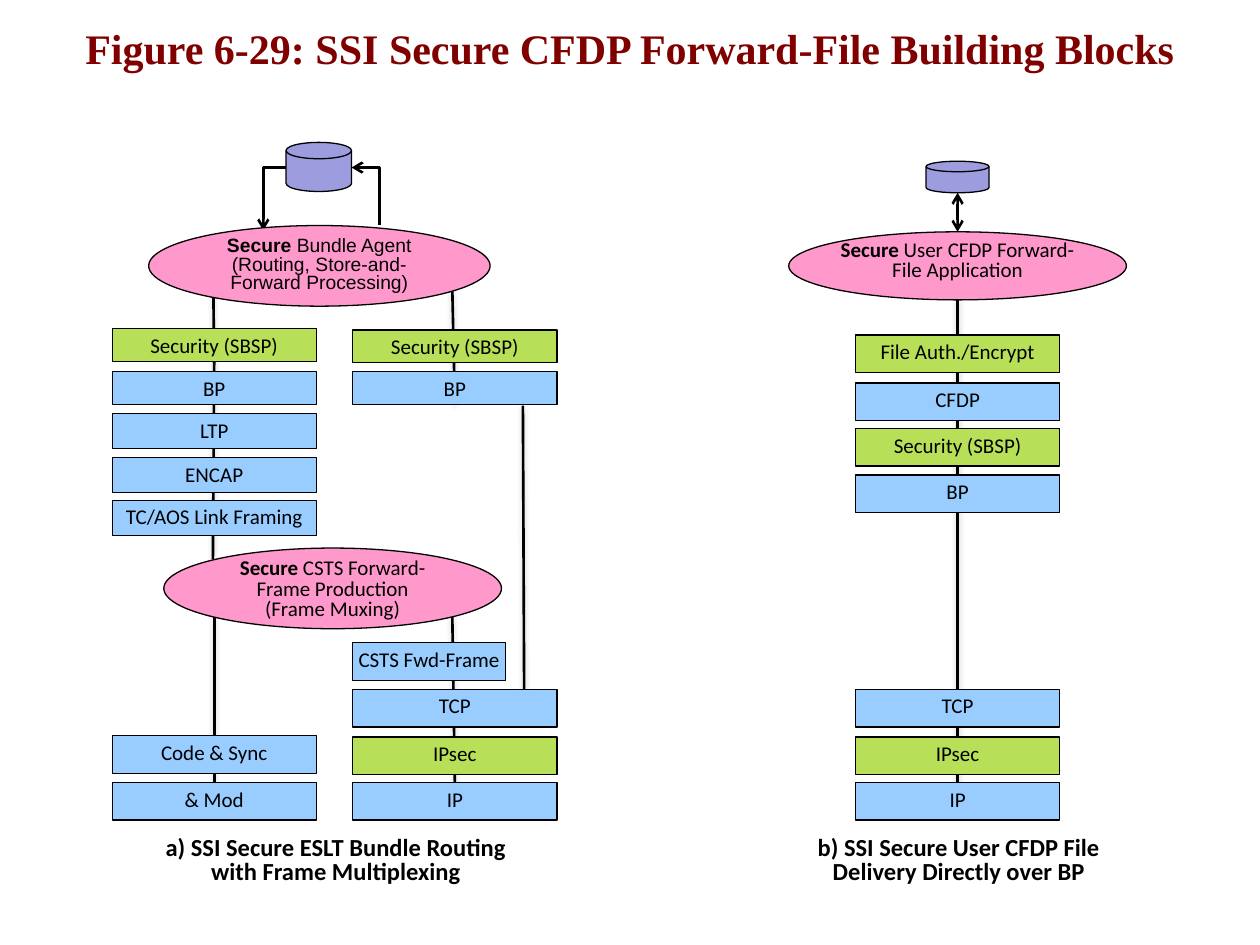
import pptx
import pptx.dml.color
import pptx.enum.shapes
import pptx.enum.text
import pptx.oxml
import pptx.oxml.ns
import pptx.util
from dataclasses import dataclass

Inches, Pt = pptx.util.Inches, pptx.util.Pt
RGB = pptx.dml.color.RGBColor.from_string
SHAPE = pptx.enum.shapes.MSO_SHAPE
CONNECTOR = pptx.enum.shapes.MSO_CONNECTOR
ANCHOR = pptx.enum.text.MSO_ANCHOR
NS = pptx.oxml.ns.nsdecls("a")


@dataclass(frozen=True)
class Theme:
    title: str = "800000"
    ink: str = "000000"
    protocol: str = "99CCFF"
    security: str = "B7E058"
    process: str = "FF99CC"
    store: str = "9C9CDF"
    title_size: int = 24
    caption_size: int = 14
    label_size: int = 12
    agent_size: int = 11
    thin: float = 0.75
    thick: float = 1.5


theme = Theme()
prs = pptx.Presentation()
prs.slide_width, prs.slide_height = Inches(10), Inches(7.5)
slide = prs.slides.add_slide(prs.slide_layouts[5])


def write(frame, paragraphs, size, font="Calibri", color=theme.ink, spacing=None, margins=None):
    """Write centred paragraphs, each a list of (text, bold) runs."""
    frame.word_wrap = True
    if margins:
        frame.margin_left = frame.margin_right = Inches(margins[0])
        frame.margin_top = frame.margin_bottom = Inches(margins[1])
    for i, runs in enumerate(paragraphs):
        paragraph = frame.add_paragraph() if i else frame.paragraphs[0]
        paragraph.alignment = pptx.enum.text.PP_ALIGN.CENTER
        paragraph.line_spacing = spacing
        for text, bold in runs:
            run = paragraph.add_run()
            run.text = text
            run.font.name, run.font.size, run.font.bold = font, Pt(size), bold
            run.font.color.rgb = RGB(color)


def connect(start, end, kind=CONNECTOR.STRAIGHT, arrows=(), shadow=False):
    """Draw a black line; arrows lists the ends (headEnd, tailEnd) that carry one."""
    line = slide.shapes.add_connector(kind, *map(Inches, start + end))
    line.line.width = Pt(theme.thick)
    line.line.color.rgb = RGB(theme.ink)
    for side in arrows:
        line.line._get_or_add_ln().append(pptx.oxml.parse_xml(f'<a:{side} {NS} type="arrow"/>'))
    properties = line._element.spPr
    if kind == CONNECTOR.ELBOW:
        properties.find(pptx.oxml.ns.qn("a:prstGeom")).set("prst", "bentConnector2")
    glow = (
        f'<a:outerShdw blurRad="{Pt(3.1)}" dist="{Pt(1.6)}" dir="5400000" rotWithShape="0">'
        '<a:srgbClr val="808080"><a:alpha val="38000"/></a:srgbClr></a:outerShdw>'
    ) if shadow else ""
    properties.append(pptx.oxml.parse_xml(f"<a:effectLst {NS}>{glow}</a:effectLst>"))


# Title
title = slide.shapes.title
title.left, title.top, title.width, title.height = map(Inches, (0.5, -0.25, 9, 1.25))
title.text_frame.vertical_anchor = ANCHOR.MIDDLE
write(title.text_frame, [[("Figure 6-29: SSI Secure CFDP Forward-File Building Blocks", True)]],
      theme.title_size, "Times New Roman", theme.title)

# Stack lines, behind the blocks
for start, end in [
    ((1.7, 4.89), (1.7, 6.21)),
    ((3.59, 4.89), (3.61, 6.21)),
    ((1.7, 2.88), (1.69, 4.44)),
    ((4.15, 3.22), (4.16, 5.47)),
    ((1.7, 2.88), (1.69, 2.01)),
    ((3.61, 3.2), (3.59, 2.3)),
    ((7.6, 2.38), (7.6, 6.21)),
]:
    connect(start, end, shadow=True)

# Links between the stores and the processes
connect((2.79, 1.33), (3.01, 1.79), CONNECTOR.ELBOW, ["headEnd"])
connect((2.27, 1.33), (2.09, 1.83), CONNECTOR.ELBOW, ["tailEnd"])
connect((7.6, 1.84), (7.6, 1.53), arrows=["headEnd", "tailEnd"])

# Processes and file stores
disk = SHAPE.FLOWCHART_MAGNETIC_DISK
bundle_agent = [[("Secure", True), (" Bundle Agent", False)],
                [("(Routing, Store-and-Forward Processing)", False)]]
frame_production = [[("Secure", True), (" CSTS Forward-Frame Production", False)],
                    [("(Frame Muxing)", False)]]
user_application = [[("Secure", True), (" User CFDP Forward-", False)],
                    [("File Application", False)]]
nodes = [
    (disk, (2.27, 1.13, 0.52, 0.39), theme.store, [], 0, "", ANCHOR.TOP, 0),
    (disk, (7.35, 1.28, 0.5, 0.25), theme.store, [], 0, "", ANCHOR.TOP, 0),
    (SHAPE.OVAL, (1.18, 1.79, 2.71, 0.64), theme.process, bundle_agent,
     theme.agent_size, "Arial", ANCHOR.MIDDLE, 0),
    (SHAPE.OVAL, (1.3, 4.35, 2.68, 0.64), theme.process, frame_production,
     theme.label_size, "Calibri", ANCHOR.TOP, 0),
    (SHAPE.OVAL, (6.26, 1.84, 2.68, 0.54), theme.process, user_application,
     theme.label_size, "Calibri", ANCHOR.TOP, 0),
]

# Protocol blocks: left, width, then (label, top, height) down each stack
stacks = [
    (0.89, 1.62, [("Security (SBSP)", 2.61, 0.26), ("BP", 2.95, 0.26), ("LTP", 3.28, 0.28),
                  ("ENCAP", 3.63, 0.28), ("TC/AOS Link Framing", 3.97, 0.28),
                  ("Code & Sync", 5.84, 0.3), ("& Mod", 6.21, 0.3)]),
    (2.8, 1.62, [("Security (SBSP)", 2.62, 0.26), ("BP", 2.95, 0.26), ("TCP", 5.47, 0.3),
                 ("IPsec", 5.85, 0.3), ("IP", 6.21, 0.3)]),
    (2.8, 1.21, [("CSTS Fwd-Frame", 5.1, 0.3)]),
    (6.79, 1.62, [("File Auth./Encrypt", 2.66, 0.3), ("CFDP", 3.04, 0.3),
                  ("Security (SBSP)", 3.4, 0.3), ("BP", 3.77, 0.3), ("TCP", 5.47, 0.3),
                  ("IPsec", 5.85, 0.3), ("IP", 6.21, 0.3)]),
]
secured = {"Security (SBSP)", "IPsec", "File Auth./Encrypt"}
for left, width, blocks in stacks:
    for label, top, height in blocks:
        fill = theme.security if label in secured else theme.protocol
        nodes.append((SHAPE.RECTANGLE, (left, top, width, height), fill, [[(label, False)]],
                      theme.label_size, "Calibri", ANCHOR.TOP, 0.04))

for kind, place, fill, paragraphs, size, font, anchor, inset in nodes:
    node = slide.shapes.add_shape(kind, *map(Inches, place))
    node.shadow.inherit = False
    node.fill.solid()
    node.fill.fore_color.rgb = RGB(fill)
    node.line.color.rgb = RGB(theme.ink)
    node.line.width = Pt(theme.thin)
    node.text_frame.vertical_anchor = anchor
    is_block = kind == SHAPE.RECTANGLE
    write(node.text_frame, paragraphs, size, font, spacing=None if is_block else 0.8,
          margins=(inset, 0.03 if is_block else 0))

# Captions
for place, lines in [
    ((1.19, 6.6, 2.95, 0.49), ["a) SSI Secure ESLT Bundle Routing", "with Frame Multiplexing"]),
    ((6.36, 6.6, 2.5, 0.49), ["b) SSI Secure User CFDP File", "Delivery Directly over BP"]),
]:
    caption = slide.shapes.add_textbox(*map(Inches, place)).text_frame
    write(caption, [[(line, True)] for line in lines], theme.caption_size, spacing=0.8)
    caption.word_wrap = False
    caption.auto_size = pptx.enum.text.MSO_AUTO_SIZE.SHAPE_TO_FIT_TEXT

prs.save("out.pptx")
